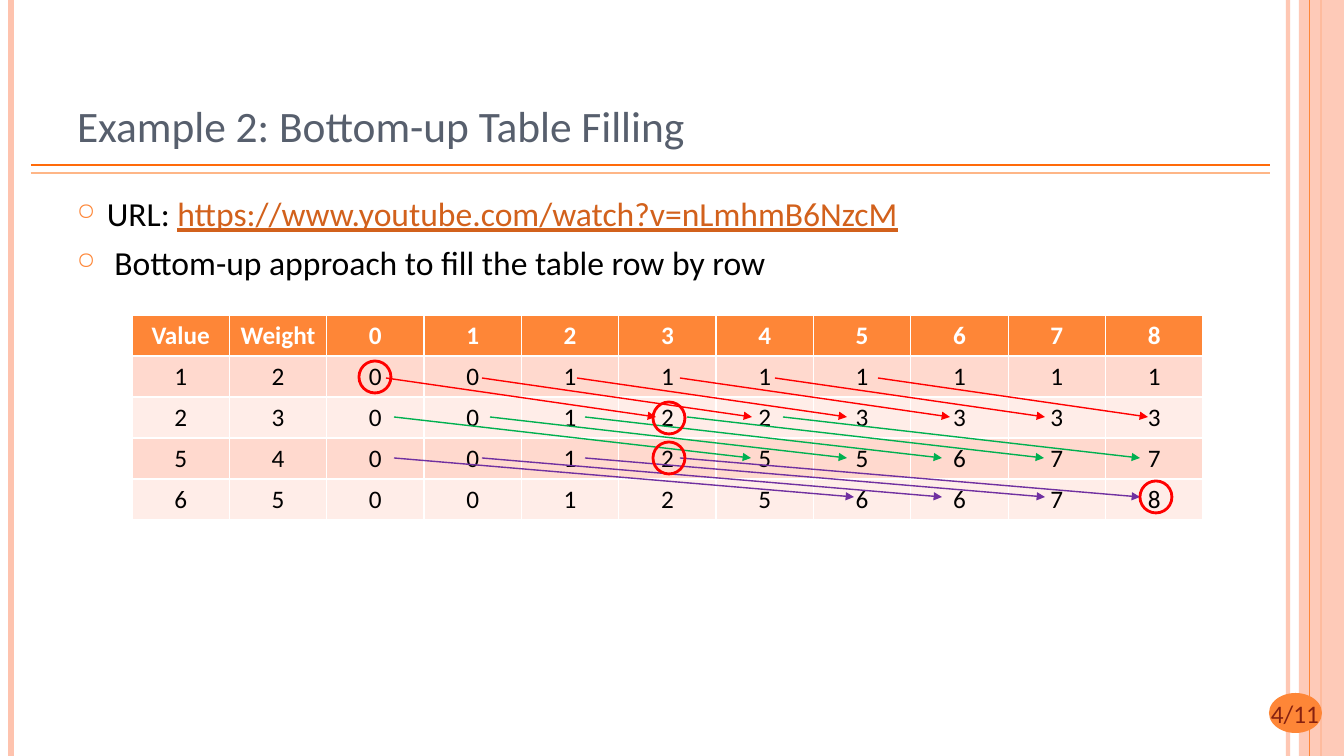
from lxml import etree
from pptx import Presentation
from pptx.dml.color import RGBColor
from pptx.enum.shapes import MSO_CONNECTOR, MSO_SHAPE
from pptx.enum.text import MSO_ANCHOR, PP_ALIGN
from pptx.oxml.ns import qn
from pptx.util import Emu, Pt

STRAIGHT = MSO_CONNECTOR.STRAIGHT
OVAL, RECTANGLE = MSO_SHAPE.OVAL, MSO_SHAPE.RECTANGLE
LEFT, CENTER = PP_ALIGN.LEFT, PP_ALIGN.CENTER
TOP, MIDDLE, BOTTOM = MSO_ANCHOR.TOP, MSO_ANCHOR.MIDDLE, MSO_ANCHOR.BOTTOM

WHITE = RGBColor(0xFF, 0xFF, 0xFF)
BLACK = RGBColor(0x00, 0x00, 0x00)
ORANGE = RGBColor(0xFE, 0x86, 0x37)
DEEP_ORANGE = RGBColor(0xFF, 0x6B, 0x0A)
PALE_ORANGE = RGBColor(0xFE, 0xB6, 0x87)
PEACH = RGBColor(0xFE, 0xC3, 0xAE)
BAND_DARK = RGBColor(0xFF, 0xD9, 0xCE)
BAND_LIGHT = RGBColor(0xFF, 0xED, 0xE8)
SLATE = RGBColor(0x57, 0x5F, 0x6D)
LINK = RGBColor(0xD2, 0x61, 0x1C)
MAROON = RGBColor(0x86, 0x21, 0x10)
RED = RGBColor(0xFF, 0x00, 0x00)
GREEN = RGBColor(0x00, 0xB0, 0x50)
PURPLE = RGBColor(0x70, 0x30, 0xA0)

PX = 914400 / 100.8
WIDTH, HEIGHT = 1344, 756


def px(length):
    return Emu(round(length * PX))


def add_xml(parent, tag, **attributes):
    return etree.SubElement(parent, qn(tag), attributes)


def set_alpha(element, percent):
    colour = next(element.iter(qn("a:srgbClr")))
    add_xml(colour, "a:alpha", val=str(percent * 1000))


class SlideBuilder:
    font_name = "Calibri"

    def __init__(self, slide):
        self.slide = slide
        self.shapes = slide.shapes

    def style(self, paragraph, size, color, align=LEFT, bold=False):
        paragraph.alignment = align
        font = paragraph.font
        font.name, font.size, font.bold = self.font_name, Pt(size), bold
        font.color.rgb = color

    def title(self, text, x, y, w, h):
        heading = self.shapes.title
        heading.left, heading.top, heading.width, heading.height = map(px, (x, y, w, h))
        heading.text_frame.text = text
        heading.text_frame.vertical_anchor = BOTTOM
        self.style(heading.text_frame.paragraphs[0], 31, SLATE)

    def text_frame(self, x, y, w, h, anchor=TOP):
        frame = self.shapes.add_textbox(*map(px, (x, y, w, h))).text_frame
        frame.word_wrap = True
        frame.vertical_anchor = anchor
        return frame

    def bullet(self, paragraph, text):
        paragraph.text = text
        properties = paragraph._p.get_or_add_pPr()
        properties.set("marL", str(px(30)))
        properties.set("indent", str(-px(30)))
        add_xml(add_xml(properties, "a:buClr"), "a:srgbClr", val=str(ORANGE))
        add_xml(properties, "a:buSzPct", val="70000")
        add_xml(properties, "a:buChar", char="○")
        self.style(paragraph, 24, BLACK)

    def line(self, x1, y1, x2, y2, color, width=1, arrow=False, alpha=None):
        connector = self.shapes.add_connector(STRAIGHT, *map(px, (x1, y1, x2, y2)))
        connector.line.color.rgb = color
        connector.line.width = Pt(width)
        properties = connector._element.spPr
        if alpha:
            set_alpha(properties, alpha)
        if arrow:
            add_xml(connector.line._get_or_add_ln(), "a:tailEnd", type="triangle")
        add_xml(properties, "a:effectLst")

    def shape(self, kind, x, y, w, h, fill=None, outline=None, alpha=None):
        shape = self.shapes.add_shape(kind, *map(px, (x, y, w, h)))
        shape.shadow.inherit = False
        if fill is None:
            shape.fill.background()
        else:
            shape.fill.solid()
            shape.fill.fore_color.rgb = fill
        if alpha:
            set_alpha(shape._element.spPr, alpha)
        if outline is None:
            shape.line.fill.background()
        else:
            shape.line.color.rgb = outline
            shape.line.width = Pt(2)

    def table(self, rows, x, y, w, row_height):
        columns = len(rows[0])
        table = self.shapes.add_table(
            len(rows), columns, px(x), px(y), px(w), px(row_height * len(rows))).table
        table.horz_banding = False
        for column in table.columns:
            column.width = px(w / columns)
        for r, values in enumerate(rows):
            table.rows[r].height = px(row_height)
            header = r == 0
            fill = ORANGE if header else (BAND_LIGHT, BAND_DARK)[r % 2]
            for c, value in enumerate(values):
                cell = table.cell(r, c)
                cell.text = str(value)
                cell.fill.solid()
                cell.fill.fore_color.rgb = fill
                self.style(cell.text_frame.paragraphs[0], 18,
                           WHITE if header else BLACK, CENTER, header)


def main():
    presentation = Presentation()
    presentation.slide_width, presentation.slide_height = px(WIDTH), px(HEIGHT)
    title_only = presentation.slide_layouts[5]
    builder = SlideBuilder(presentation.slides.add_slide(title_only))

    # Side stripes and title rules
    builder.line(1288, 0, 1288, HEIGHT, PEACH, 3, alpha=93)
    builder.line(11, 0, 11, HEIGHT, PEACH, 4.5)
    builder.line(1321, 0, 1321, HEIGHT, ORANGE, 1.5)
    builder.shape(RECTANGLE, 1299, 0, 45, HEIGHT, PEACH, alpha=87)
    builder.line(1310, 0, 1310, HEIGHT, ORANGE, 0.75)
    for y, color in ((165, DEEP_ORANGE), (173, PALE_ORANGE)):
        builder.line(31, y, 1270, y, color)

    # Page number
    builder.shape(OVAL, 1269, 693, 53, 40, ORANGE)
    page_number = builder.text_frame(1255, 693, 80, 40, MIDDLE).paragraphs[0]
    page_number.text = "4/11"
    builder.style(page_number, 18, MAROON, CENTER)

    # Title and bullets
    builder.title("Example 2: Bottom-up Table Filling", 67, 30, 1098, 126)
    body = builder.text_frame(67, 188, 1098, 525)
    video = body.paragraphs[0]
    builder.bullet(video, "URL: ")
    address = video.add_run()
    address.text = "https://www.youtube.com/watch?v=nLmhmB6NzcM"
    address.font.underline = True
    address.font.color.rgb = LINK
    approach = body.add_paragraph()
    approach.space_before = Pt(6)
    builder.bullet(approach, " Bottom-up approach to fill the table row by row")

    # Knapsack table
    knapsack = [
        ["Value", "Weight", *range(9)],
        [1, 2, 0, 0, 1, 1, 1, 1, 1, 1, 1],
        [2, 3, 0, 0, 1, 2, 2, 3, 3, 3, 3],
        [5, 4, 0, 0, 1, 2, 5, 5, 6, 7, 7],
        [6, 5, 0, 0, 1, 2, 5, 6, 6, 7, 8],
    ]
    builder.table(knapsack, 132, 315, 1071, 41)

    # Dependency arrows: colour, start and end height, reach, start points
    dependencies = [
        (RED, 378, 417, 270, (386, 482, 577, 680, 775, 878)),
        (GREEN, 417, 458, 357, (394, 490, 585, 687, 783)),
        (PURPLE, 458, 497, 460, (394, 482, 585, 680)),
    ]
    for color, start_y, end_y, reach, starts in dependencies:
        for start in starts:
            builder.line(start, start_y, start + reach, end_y, color, arrow=True)

    # Circles on the optimal path
    for x, y in ((1140, 481), (653, 442), (653, 402), (359, 361)):
        builder.shape(OVAL, x, y, 32, 32, outline=RED)

    presentation.save("out.pptx")


if __name__ == "__main__":
    main()
